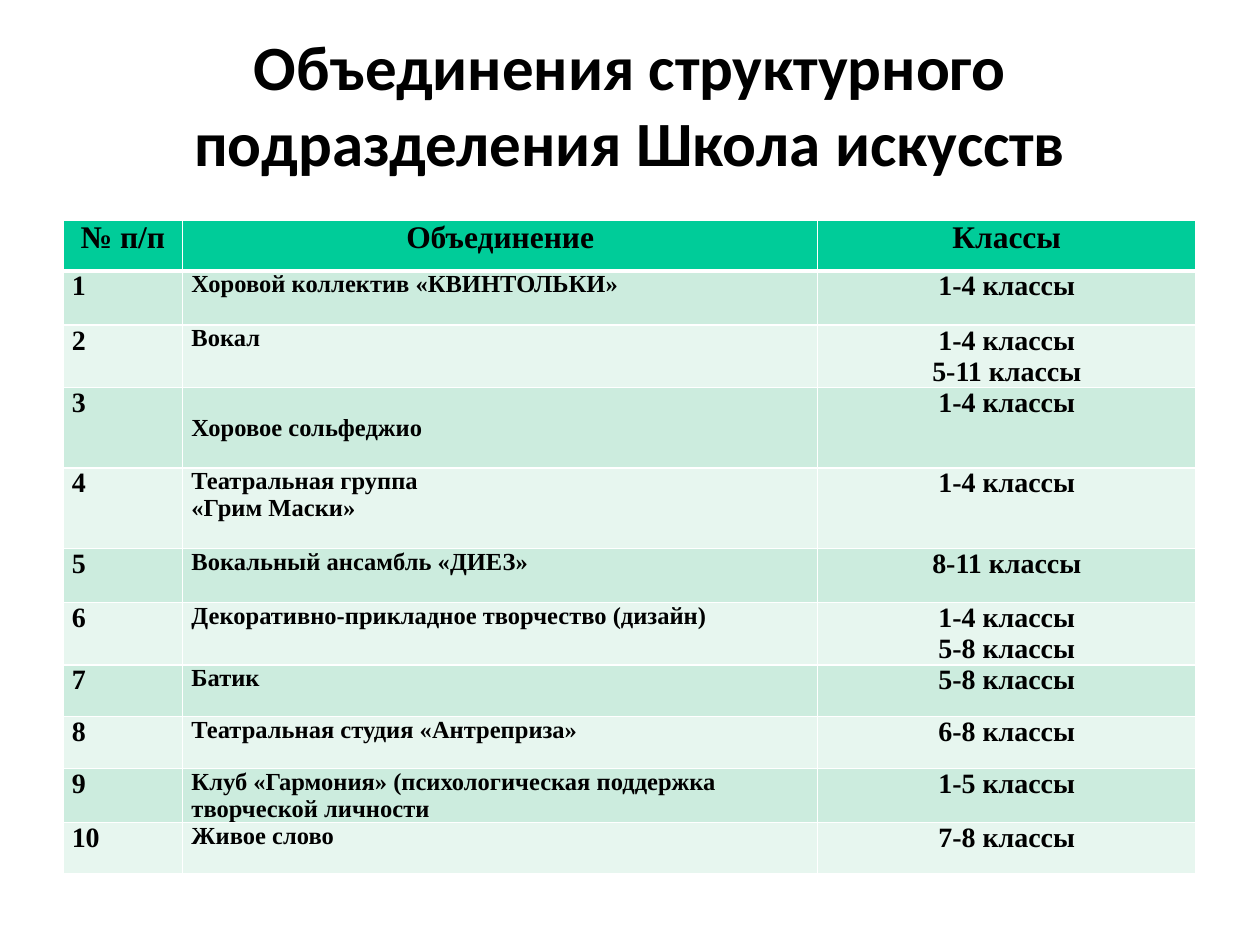
from lxml import etree
from pptx import Presentation
from pptx.dml.color import RGBColor
from pptx.enum.text import MSO_ANCHOR, PP_ALIGN
from pptx.oxml.ns import qn
from pptx.util import Inches, Pt

CENTER, LEFT = PP_ALIGN.CENTER, PP_ALIGN.LEFT
TOP = MSO_ANCHOR.TOP
BLACK = RGBColor(0x00, 0x00, 0x00)
WHITE = RGBColor(0xFF, 0xFF, 0xFF)
HEADER_GREEN = RGBColor(0x00, 0xCC, 0x99)
BAND_GREENS = RGBColor(0xCC, 0xEC, 0xDE), RGBColor(0xE7, 0xF6, 0xEF)

TITLE = "Объединения структурного подразделения Школа искусств"
HEADERS = "№ п/п", "Объединение", "Классы"
GROUPS = [
    ("Хоровой коллектив «КВИНТОЛЬКИ»", "1-4 классы", 0.43),
    ("Вокал", "1-4 классы\n5-11 классы", 0.49),
    ("Хоровое сольфеджио", "1-4 классы", 0.64),
    ("Театральная группа\n«Грим Маски»", "1-4 классы", 0.64),
    ("Вокальный ансамбль «ДИЕЗ»", "8-11 классы", 0.43),
    ("Декоративно-прикладное творчество (дизайн)", "1-4 классы\n5-8 классы", 0.49),
    ("Батик", "5-8 классы", 0.41),
    ("Театральная студия «Антреприза»", "6-8 классы", 0.41),
    ("Клуб «Гармония» (психологическая поддержка творческой личности",
     "1-5 классы", 0.43),
    ("Живое слово", "7-8 классы", 0.41),
]
LOWERED_GROUP = "Хоровое сольфеджио"
HEADER_HEIGHT = 0.4
COLUMN_WIDTHS = 0.95, 5.04, 3
HEADER_SIZES, BODY_SIZES = (18, 18, 18), (16, 14, 16)
HEADER_ALIGNMENTS, BODY_ALIGNMENTS = (CENTER,) * 3, (LEFT, LEFT, CENTER)


class SlideBuilder:
    title_font = "Calibri"
    table_font = "Times New Roman"
    left, width = 0.05, 0.9
    cell_margin = Inches(0.07)

    def __init__(self, presentation):
        self.page_width = presentation.slide_width
        self.page_height = presentation.slide_height
        self.slide = presentation.slides.add_slide(presentation.slide_layouts[5])

    def box(self, top, height):
        return (int(self.left * self.page_width), int(top * self.page_height),
                int(self.width * self.page_width), int(height * self.page_height))

    def set_text(self, frame, text, font, size, alignment):
        frame.text = text
        for paragraph in frame.paragraphs:
            paragraph.alignment = alignment
            paragraph.font.name = font
            paragraph.font.size = Pt(size)
            paragraph.font.bold = True
            paragraph.font.color.rgb = BLACK

    def title(self, text, top, height):
        shape = self.slide.shapes.title
        shape.left, shape.top, shape.width, shape.height = self.box(top, height)
        frame = shape.text_frame
        frame.word_wrap = True
        frame.vertical_anchor = TOP
        frame.margin_top = Inches(0.07)
        self.set_text(frame, text, self.title_font, 36, CENTER)

    def borders(self, cell, top, bottom):
        properties = cell._tc.get_or_add_tcPr()
        widths = {"lnL": 1, "lnR": 1, "lnT": top, "lnB": bottom}
        for position, (side, points) in enumerate(widths.items()):
            line = etree.Element(qn(f"a:{side}"), w=str(Pt(points)))
            fill = etree.SubElement(line, qn("a:solidFill"))
            etree.SubElement(fill, qn("a:srgbClr"), val=str(WHITE))
            properties.insert(position, line)

    def table(self, rows, heights, top):
        height = Inches(sum(heights)) / self.page_height
        table = self.slide.shapes.add_table(
            len(rows), len(COLUMN_WIDTHS), *self.box(top, height)).table
        for column, width in zip(table.columns, COLUMN_WIDTHS):
            column.width = Inches(width)
        for index, (values, row_height) in enumerate(zip(rows, heights)):
            table.rows[index].height = Inches(row_height)
            color = BAND_GREENS[(index - 1) % 2] if index else HEADER_GREEN
            sizes = BODY_SIZES if index else HEADER_SIZES
            alignments = BODY_ALIGNMENTS if index else HEADER_ALIGNMENTS
            for column, text in enumerate(values):
                cell = table.cell(index, column)
                cell.margin_left = cell.margin_right = self.cell_margin
                cell.margin_top = Inches(0.22 if text == LOWERED_GROUP else 0)
                cell.margin_bottom = 0
                cell.fill.solid()
                cell.fill.fore_color.rgb = color
                self.borders(cell, 3 if index == 1 else 1, 1 if index else 3)
                self.set_text(cell.text_frame, text, self.table_font,
                              sizes[column], alignments[column])


def main():
    presentation = Presentation()
    presentation.slide_width, presentation.slide_height = Inches(10), Inches(7.5)
    builder = SlideBuilder(presentation)
    builder.title(TITLE, 0.02, 0.16)
    rows = [HEADERS] + [(str(number), name, classes)
                        for number, (name, classes, _) in enumerate(GROUPS, 1)]
    heights = [HEADER_HEIGHT] + [height for _, _, height in GROUPS]
    builder.table(rows, heights, 1.75 / 7.5)
    presentation.save("out.pptx")


if __name__ == "__main__":
    main()
